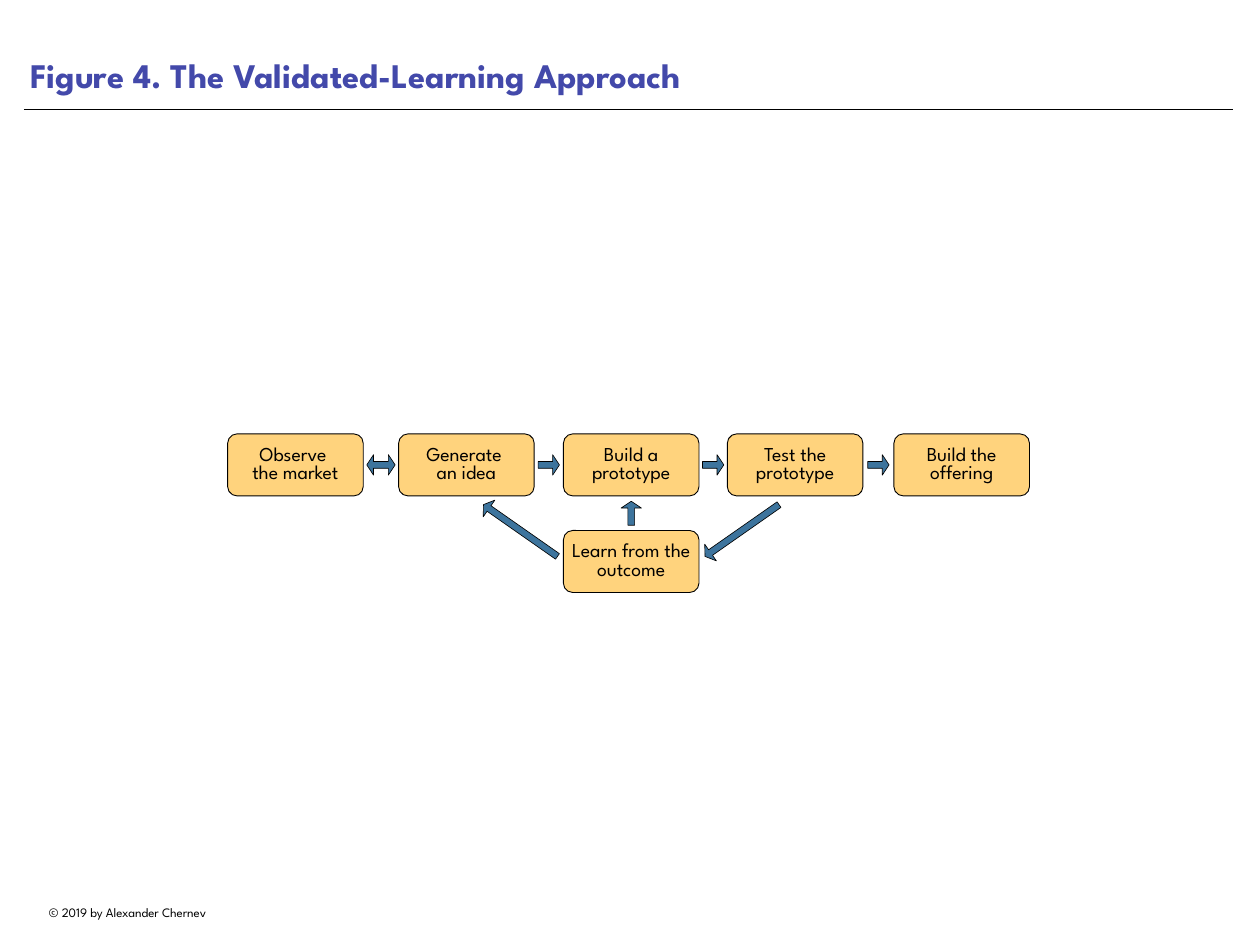
from pptx import Presentation
from pptx.dml.color import RGBColor
from pptx.enum.shapes import MSO_CONNECTOR, MSO_SHAPE
from pptx.enum.text import MSO_ANCHOR, MSO_AUTO_SIZE, PP_ALIGN
from pptx.util import Inches, Pt
from lxml.etree import SubElement
from pptx.oxml.ns import qn

WIDTH, HEIGHT = Inches(14.22), Inches(10.67)
COLUMN, ROW = WIDTH / 100, HEIGHT / 100
FONT = "League Spartan"
BLACK = RGBColor(0x00, 0x00, 0x00)
INDIGO = RGBColor(0x43, 0x49, 0xAA)
AMBER = RGBColor(0xFF, 0xD3, 0x7D)
STEEL = RGBColor(0x3D, 0x74, 0x9D)

TITLE_BOX = (1.9, 0, 95.92, 10.78)
RULE_BOX = (1.9, 11.62, 95.99, 0)
FOOTER_BOX = (1.9, 95.22, 16.46, 2.62)
FLOW_BOX = (18.07, 45.92, 63.64, 16.78)

STEPS = [
    ("Observe \vthe market", 0),
    ("Generate \van idea", 13.57),
    ("Build a prototype", 26.65),
    ("Test the prototype", 39.66),
    ("Build the offering", 52.88),
]
STEP_WIDTH, STEP_HEIGHT = 10.76, 6.56
ARROW_HEIGHT = 2.16
DIAGONAL_OFFSET = 8.79

NO_INSETS = dict.fromkeys(("margin_left", "margin_right", "margin_top", "margin_bottom"), 0)
TITLE_INSETS = dict.fromkeys(NO_INSETS, Inches(0.07))


def apply(target, values):
    for name, value in values.items():
        setattr(target, name, value)


def place(box):
    left, top, width, height = box
    return [round(length) for length in (left * COLUMN, top * ROW, width * COLUMN, height * ROW)]


def write(shape, text, frame_format, paragraph_format, size, color, bold=False):
    frame = shape.text_frame
    frame.text = text
    apply(frame, frame_format)
    paragraph = frame.paragraphs[0]
    apply(paragraph, paragraph_format)
    for run in paragraph.runs:
        apply(run.font, {"name": FONT, "size": Pt(size), "bold": bold})
        run.font.color.rgb = color


def add_block(slide, preset, box, fill, line_width, adjustments):
    shape = slide.shapes.add_shape(preset, *place(box))
    shape.shadow.inherit = False
    shape.fill.solid()
    shape.fill.fore_color.rgb = fill
    shape.line.color.rgb = BLACK
    shape.line.width = Pt(line_width)
    for index, value in enumerate(adjustments):
        shape.adjustments[index] = value
    return shape


def add_step(slide, text, left, top):
    box = (left, top, STEP_WIDTH, STEP_HEIGHT)
    shape = add_block(slide, MSO_SHAPE.ROUNDED_RECTANGLE, box, AMBER, 0.75, [0.15])
    write(shape, text,
          {"vertical_anchor": MSO_ANCHOR.MIDDLE, "word_wrap": True, **NO_INSETS},
          {"alignment": PP_ALIGN.CENTER, "line_spacing": 0.8}, 16, BLACK)


def add_arrow(slide, center, middle, length, rotation=0, preset=MSO_SHAPE.RIGHT_ARROW):
    box = (center - length / 2, middle - ARROW_HEIGHT / 2, length, ARROW_HEIGHT)
    shape = add_block(slide, preset, box, STEEL, 0.5, [0.33, 0.33])
    shape.rotation = rotation


def add_header(slide, title_box, rule_box):
    title = slide.shapes.title
    apply(title, dict(zip(("left", "top", "width", "height"), place(title_box))))
    write(title, "Figure 4. The Validated-Learning Approach",
          {"vertical_anchor": MSO_ANCHOR.BOTTOM, "word_wrap": True,
           "auto_size": MSO_AUTO_SIZE.NONE, **TITLE_INSETS},
          {"alignment": PP_ALIGN.LEFT}, 28, INDIGO, True)
    left, top, width, height = place(rule_box)
    rule = slide.shapes.add_connector(MSO_CONNECTOR.STRAIGHT, left, top, left + width, top + height)
    rule.line.color.rgb = BLACK
    rule.line.width = Pt(0.5)
    SubElement(rule._element.spPr, qn("a:effectLst"))


def add_flow(slide, box):
    left, top, width, height = box
    for text, offset in STEPS:
        add_step(slide, text, left + offset, top)
    for index, (step, following) in enumerate(zip(STEPS, STEPS[1:])):
        center = left + (step[1] + STEP_WIDTH + following[1]) / 2
        length, preset = (1.69, MSO_SHAPE.RIGHT_ARROW) if index else (2.25, MSO_SHAPE.LEFT_RIGHT_ARROW)
        add_arrow(slide, center, top + STEP_HEIGHT / 2, length, preset=preset)

    learn_left = left + STEPS[2][1]
    learn_top = top + height - STEP_HEIGHT
    learn_center = learn_left + STEP_WIDTH / 2
    add_step(slide, "Learn from the outcome", learn_left, learn_top)
    add_arrow(slide, learn_center, (top + STEP_HEIGHT + learn_top) / 2, 1.9, 270)
    for side, rotation in ((-1, 215), (1, 145)):
        add_arrow(slide, learn_center + side * DIAGONAL_OFFSET, learn_top, 7.17, rotation)


def add_footer(slide, box):
    footer = slide.shapes.add_textbox(*place(box))
    write(footer, "© 2019 by Alexander Chernev", {"word_wrap": False},
          {"alignment": PP_ALIGN.CENTER}, 10.5, BLACK)


def main():
    presentation = Presentation()
    apply(presentation, {"slide_width": WIDTH, "slide_height": HEIGHT})
    slide = presentation.slides.add_slide(presentation.slide_layouts[5])
    add_header(slide, TITLE_BOX, RULE_BOX)
    add_flow(slide, FLOW_BOX)
    add_footer(slide, FOOTER_BOX)
    presentation.save("out.pptx")


if __name__ == "__main__":
    main()
